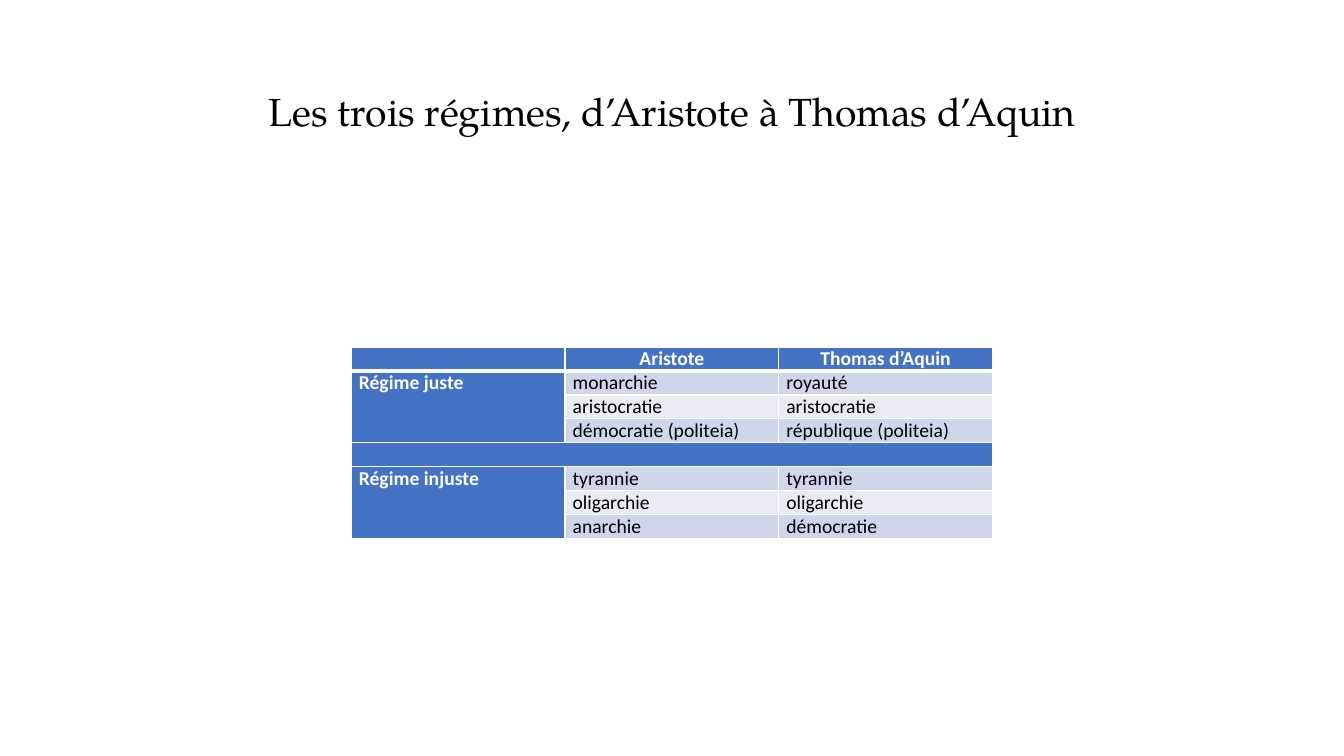
from dataclasses import dataclass

from lxml.etree import SubElement
from pptx import Presentation
from pptx.dml.color import RGBColor as RGB
from pptx.enum.text import MSO_ANCHOR as ANCHOR, PP_ALIGN as ALIGN
from pptx.oxml.ns import qn
from pptx.util import Pt

# Content
TITLE = "Les trois régimes, d’Aristote à Thomas d’Aquin"
ROWS = [
    ("", "Aristote", "Thomas d’Aquin"),
    ("Régime juste", "monarchie", "royauté"),
    ("", "aristocratie", "aristocratie"),
    ("", "démocratie (politeia)", "république (politeia)"),
    ("", "", ""),
    ("Régime injuste", "tyrannie", "tyrannie"),
    ("", "oligarchie", "oligarchie"),
    ("", "anarchie", "démocratie"),
]
SEPARATOR = 4
MERGES = [((1, 0), (3, 0)), ((SEPARATOR, 0), (SEPARATOR, 2)), ((5, 0), (7, 0))]


@dataclass(frozen=True)
class Theme:
    title_font: str = "TeX Gyre Pagella"
    body_font: str = "Calibri"
    title_size: int = 28
    body_size: int = 14
    accent: str = "4472C4"
    bands: tuple = ("E9EBF5", "CFD5EA")
    dark: str = "000000"
    light: str = "FFFFFF"


T = Theme()

# Layout, in points
SLIDE_W, SLIDE_H = 960, 540
TITLE_BOX = (66, 28.75, 828, 104.4)
TABLE_TOP, COL_W, ROW_H = 248, 152.7, 17.05
CELL_PAD = 5.4


def write(p, text, align, **font):
    p.alignment = align
    r = p.add_run()
    r.text = text
    color = font.pop("color")
    for name, value in font.items():
        setattr(r.font, name, value)
    r.font.color.rgb = RGB.from_string(color)


def set_borders(cell, **widths):
    tc_pr = cell._tc.get_or_add_tcPr()
    for side in "LRTB":
        ln = SubElement(tc_pr, qn(f"a:ln{side}"), w=str(Pt(widths.get(side, 1))))
        fill = SubElement(ln, qn("a:solidFill"))
        SubElement(fill, qn("a:srgbClr"), val=T.light)


def add_title(s):
    sp = s.shapes.title
    sp.left, sp.top, sp.width, sp.height = map(Pt, TITLE_BOX)
    tf = sp.text_frame
    tf.word_wrap = True
    tf.vertical_anchor = ANCHOR.MIDDLE
    p = tf.paragraphs[0]
    p.line_spacing = 0.9
    write(p, TITLE, ALIGN.CENTER, name=T.title_font, size=Pt(T.title_size), color=T.dark)


def format_cell(cell, row, col, text):
    is_head = row in (0, SEPARATOR) or col == 0
    fmt = {"margin_left": Pt(CELL_PAD), "margin_right": Pt(CELL_PAD),
           "margin_top": 0, "margin_bottom": 0}
    for name, value in fmt.items():
        setattr(cell, name, value)

    # A thick rule separates the header from the body
    set_borders(cell, **{0: {"B": 3}, 1: {"T": 3}}.get(row, {}))
    cell.fill.solid()
    cell.fill.fore_color.rgb = RGB.from_string(T.accent if is_head else T.bands[row % 2])

    p = cell.text_frame.paragraphs[0]
    if text:
        write(p, text, ALIGN.LEFT if row else ALIGN.CENTER, name=T.body_font,
              size=Pt(T.body_size), bold=is_head, color=T.light if is_head else T.dark)
    else:
        # Keeps empty rows as low as the others
        SubElement(p._p, qn("a:endParaRPr"), sz=str(T.body_size * 100))


def add_regimes(s):
    n_rows, n_cols = len(ROWS), len(ROWS[0])
    width = n_cols * COL_W
    table = s.shapes.add_table(n_rows, n_cols, Pt((SLIDE_W - width) / 2), Pt(TABLE_TOP),
                               Pt(width), Pt(n_rows * ROW_H)).table
    table.first_col = True
    for column in table.columns:
        column.width = Pt(COL_W)
    for row, texts in enumerate(ROWS):
        table.rows[row].height = Pt(ROW_H)
        for col, text in enumerate(texts):
            format_cell(table.cell(row, col), row, col, text)
    for first, last in MERGES:
        table.cell(*first).merge(table.cell(*last))


def main():
    prs = Presentation()
    prs.slide_width, prs.slide_height = Pt(SLIDE_W), Pt(SLIDE_H)
    s = prs.slides.add_slide(prs.slide_layouts[5])
    add_title(s)
    add_regimes(s)
    prs.save("out.pptx")


if __name__ == "__main__":
    main()
